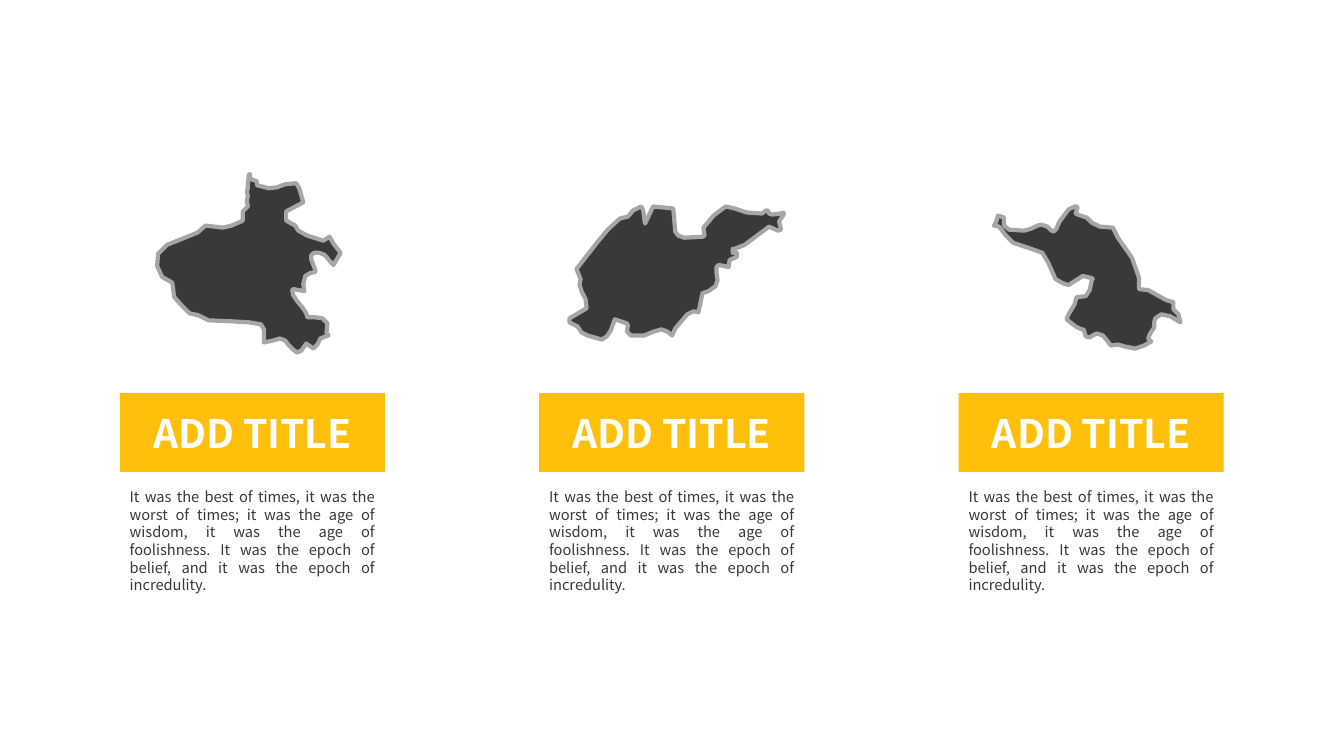
from dataclasses import dataclass

from lxml import etree
from pptx import Presentation
from pptx.dml.color import RGBColor
from pptx.enum.shapes import MSO_SHAPE
from pptx.enum.text import MSO_ANCHOR, PP_ALIGN
from pptx.oxml.ns import qn
from pptx.util import Cm, Pt

RECTANGLE = MSO_SHAPE.RECTANGLE
TOP, MIDDLE = MSO_ANCHOR.TOP, MSO_ANCHOR.MIDDLE
CENTER, JUSTIFY = PP_ALIGN.CENTER, PP_ALIGN.JUSTIFY


@dataclass(frozen=True)
class Theme:
    font: str = "Noto Sans CJK SC"
    dark: RGBColor = RGBColor(0x3B, 0x38, 0x38)
    border: RGBColor = RGBColor(0xA6, 0xA6, 0xA6)
    accent: RGBColor = RGBColor(0xFF, 0xBF, 0x0B)
    white: RGBColor = RGBColor(0xFF, 0xFF, 0xFF)
    title_size: Pt = Pt(28)
    body_size: Pt = Pt(10.5)
    border_width: Pt = Pt(3)


THEME = Theme()
MAP_UNIT = Cm(2.54) / 100
TITLE = "ADD TITLE"
BODY = (
    "It was the best of times, it was the worst of times; it was the age of wisdom, "
    "it was the age of foolishness. It was the epoch of belief, "
    "and it was the epoch of incredulity."
)

WEST_MAP = [
    (77, 58), (47, 70), (38, 79), (37, 91), (42, 102), (51, 107), (52, 108), (54, 122),
    (62, 131), (69, 138), (78, 140), (88, 145), (111, 146), (128, 147), (140, 149),
    (143, 154), (143, 167), (152, 165), (159, 163), (164, 165), (167, 169), (172, 174),
    (176, 177), (180, 175), (185, 168), (192, 173), (196, 169), (199, 163), (204, 161),
    (207, 160), (205, 157), (206, 148), (201, 143), (194, 142), (186, 142), (185, 138),
    (181, 132), (176, 126), (172, 120), (171, 115), (172, 114), (183, 116), (182, 109),
    (184, 101), (189, 98), (194, 97), (194, 95), (190, 85), (190, 80), (193, 78),
    (198, 78), (203, 80), (204, 81), (209, 87), (212, 90), (219, 78), (212, 69),
    (208, 62), (202, 66), (186, 61), (177, 56), (174, 51), (165, 46), (165, 37),
    (182, 28), (180, 21), (178, 14), (175, 9), (164, 10), (156, 13), (148, 14),
    (136, 11), (136, 7), (130, 5), (129, 3), (129, 0), (128, 0), (127, 10), (127, 14),
    (126, 17), (127, 22), (126, 26), (127, 32), (122, 37), (122, 46), (120, 47),
    (111, 51), (102, 53), (85, 51),
]
CENTRAL_MAP = [
    (225, 36), (221, 39), (206, 38), (194, 34), (185, 32), (173, 41), (163, 53),
    (164, 61), (162, 62), (144, 63), (138, 61), (135, 57), (133, 34), (113, 32),
    (105, 49), (104, 42), (103, 35), (101, 32), (93, 36), (88, 42), (80, 44), (68, 55),
    (58, 67), (37, 94), (41, 104), (40, 110), (42, 116), (46, 124), (47, 133),
    (30, 143), (30, 147), (38, 151), (42, 157), (48, 160), (62, 164), (67, 161),
    (71, 155), (75, 144), (87, 148), (88, 150), (87, 156), (91, 160), (104, 160),
    (114, 156), (121, 154), (127, 156), (132, 160), (135, 153), (141, 146), (147, 139),
    (153, 136), (158, 137), (162, 118), (168, 116), (175, 111), (177, 105), (176, 99),
    (176, 92), (178, 90), (188, 92), (189, 85), (196, 82), (196, 78), (192, 78),
    (192, 74), (194, 74), (204, 70), (228, 52), (237, 56), (240, 55), (238, 47),
    (243, 39), (242, 38), (240, 39), (231, 40), (228, 39), (227, 36),
]
EAST_MAP = [
    (165, 73), (158, 63), (153, 53), (140, 52), (132, 48), (127, 43), (118, 40),
    (116, 39), (118, 33), (117, 32), (115, 32), (109, 35), (106, 39), (100, 47),
    (97, 54), (94, 57), (91, 55), (88, 52), (82, 50), (78, 51), (72, 54), (65, 56),
    (50, 55), (45, 51), (45, 43), (39, 41), (37, 48), (35, 51), (40, 52), (47, 61),
    (54, 68), (69, 73), (83, 78), (89, 88), (96, 104), (103, 108), (109, 110),
    (123, 101), (132, 103), (133, 104), (132, 105), (130, 115), (126, 121), (117, 122),
    (115, 129), (109, 139), (107, 144), (116, 151), (122, 154), (124, 154), (126, 161),
    (130, 162), (133, 160), (137, 158), (143, 160), (148, 166), (151, 170), (158, 169),
    (165, 171), (175, 173), (184, 170), (191, 166), (188, 163), (190, 158), (194, 152),
    (194, 147), (195, 143), (201, 139), (210, 141), (220, 147), (218, 139), (213, 134),
    (213, 127), (206, 125), (188, 115), (179, 114), (179, 103), (172, 83),
]


def write_text(shape, text, *, size, color, bold=False, align=CENTER, anchor=MIDDLE):
    frame = shape.text_frame
    frame.word_wrap = True
    frame.vertical_anchor = anchor
    para = frame.paragraphs[0]
    para.alignment = align
    span = para.add_run()
    span.text = text
    span.font.name = THEME.font
    span.font.size = size
    span.font.bold = bold
    span.font.color.rgb = color


def add_map(page, left, top, outline):
    builder = page.shapes.build_freeform(*outline[0], scale=MAP_UNIT)
    builder.add_line_segments(outline[1:], close=True)
    region = builder.convert_to_shape(left, top)
    region.shadow.inherit = False
    region.fill.solid()
    region.fill.fore_color.rgb = THEME.dark
    region.line.color.rgb = THEME.border
    region.line.width = THEME.border_width
    etree.SubElement(region.line._get_or_add_ln(), qn("a:round"))


def add_column(page, left, top, width, outline):
    add_map(page, left, top, outline)
    banner = page.shapes.add_shape(RECTANGLE, left, top + Cm(5.52), width, Cm(1.98))
    banner.shadow.inherit = False
    banner.fill.solid()
    banner.fill.fore_color.rgb = THEME.accent
    banner.line.fill.background()
    write_text(banner, TITLE, size=THEME.title_size, color=THEME.white, bold=True)
    box = page.shapes.add_textbox(left, top + Cm(7.78), width, Cm(2.49))
    write_text(box, BODY, size=THEME.body_size, color=THEME.dark, align=JUSTIFY, anchor=TOP)


def main():
    deck = Presentation()
    deck.slide_width, deck.slide_height = Cm(33.87), Cm(19.05)
    page = deck.slides.add_slide(deck.slide_layouts[6])
    for index, outline in enumerate((WEST_MAP, CENTRAL_MAP, EAST_MAP)):
        add_column(page, Cm(3.02 + 10.57 * index), Cm(4.39), Cm(6.68), outline)
    deck.save("out.pptx")


if __name__ == "__main__":
    main()
